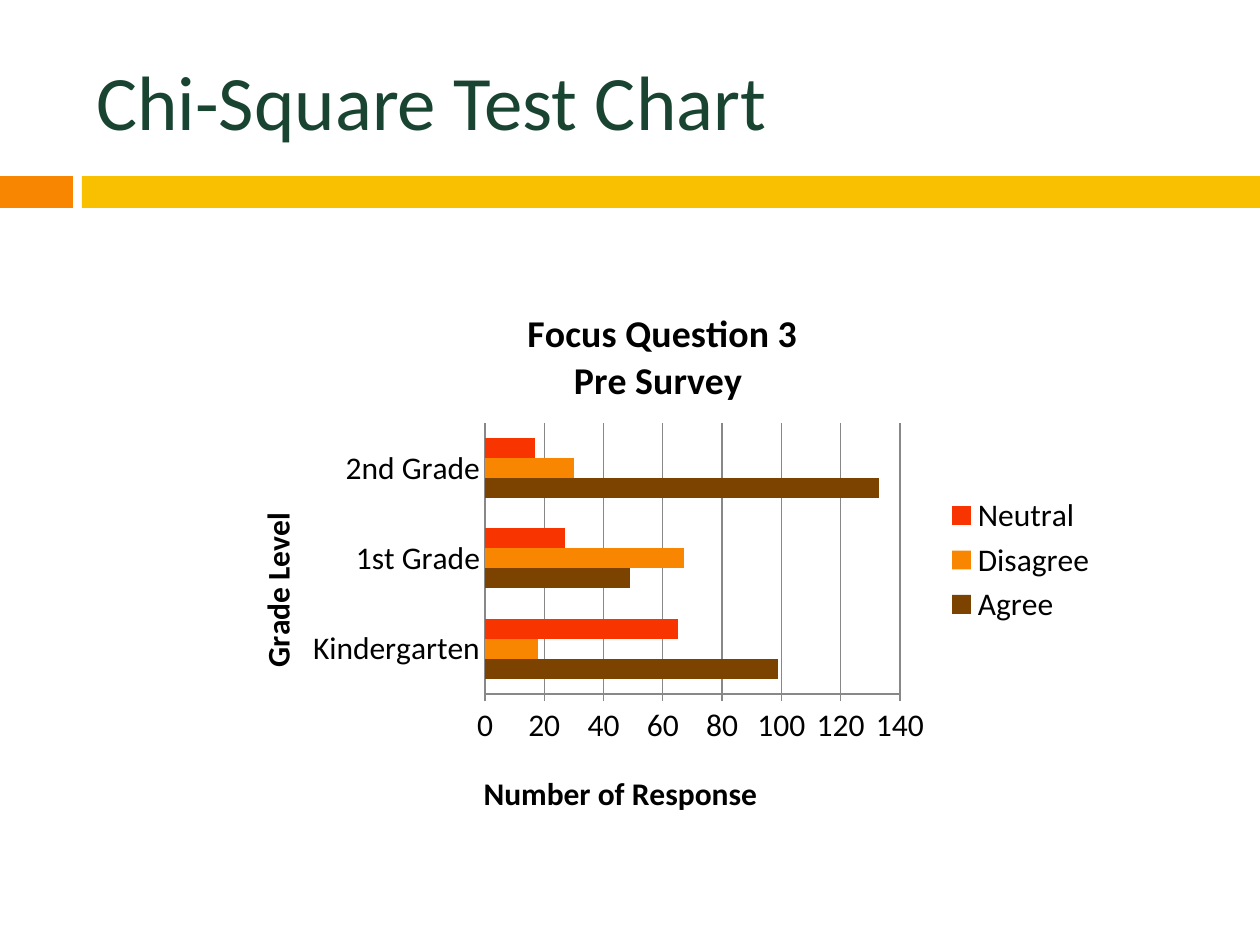
from lxml import etree
from pptx import Presentation
from pptx import util as u
from pptx.chart.data import CategoryChartData
from pptx.dml.color import RGBColor
from pptx.enum import chart as kinds, shapes, text
from pptx.oxml.ns import qn

FONT = "Calibri"
GREEN = RGBColor(0x19, 0x44, 0x31)
ORANGE = RGBColor(0xF8, 0x86, 0x00)
YELLOW = RGBColor(0xF8, 0xC0, 0x00)
BROWN = RGBColor(0x7C, 0x43, 0x00)
RED = RGBColor(0xF8, 0x35, 0x00)
GREY = RGBColor(0x88, 0x88, 0x88)
BLACK = RGBColor(0, 0, 0)

HEADING = "Chi-Square Test Chart"
BANDS = [(0, 73, ORANGE), (82, 1178, YELLOW)]
CHART_TITLE = "Focus Question 3\nPre Survey "
GRADES = ["Kindergarten", "1st Grade", "2nd Grade"]
ANSWERS = [
    ("Agree", (99, 49, 133), BROWN),
    ("Disagree", (18, 67, 30), ORANGE),
    ("Neutral", (65, 27, 17), RED),
]
CHART_AREA = (215, 287, 895, 546)
PLOT_AREA = (485, 423, 415, 271)
GRADE_TITLE_AT = (250, 507)
RESPONSE_TITLE_AT = (478, 766)


def px(length):
    """Turn px at 126 to the inch into EMU."""
    return u.Emu(round(length * 914400 / 126))


def style(font, size, bold=False, color=BLACK):
    """Set the face, size, weight and colour of a font."""
    font.name, font.size, font.bold = FONT, u.Pt(size), bold
    font.color.rgb = color


def set_layout(parent, index, area):
    """Fix a chart part at a px position, with a size if one is given."""
    for old in parent.findall(qn("c:layout")):
        parent.remove(old)
    layout = etree.Element(qn("c:layout"))
    manual = etree.SubElement(layout, qn("c:manualLayout"))
    left, top, width, height = CHART_AREA
    values = [("xMode", "edge"), ("yMode", "edge"),
              ("x", (area[0] - left) / width), ("y", (area[1] - top) / height)]
    if len(area) == 4:
        values.insert(0, ("layoutTarget", "inner"))
        values += [("w", area[2] / width), ("h", area[3] / height)]
    for tag, value in values:
        etree.SubElement(manual, qn("c:" + tag)).set("val", str(value))
    parent.insert(index, layout)


def set_title(title, wording, size):
    """Write a bold chart or axis title."""
    title.text_frame.text = wording
    for para in title.text_frame.paragraphs:
        for span in para.runs:
            style(span.font, size, True)


def add_bands(page):
    """Draw the two bars under the heading."""
    for left, width, color in BANDS:
        band = page.shapes.add_shape(
            shapes.MSO_SHAPE.RECTANGLE, px(left), px(176), px(width), px(32))
        band.shadow.inherit = False
        band.fill.solid()
        band.fill.fore_color.rgb = color
        band.line.fill.background()


def add_heading(page):
    """Write the slide heading."""
    box = page.shapes.add_textbox(px(84), px(32), px(1124), px(136))
    frame = box.text_frame
    frame.word_wrap = True
    frame.vertical_anchor = text.MSO_ANCHOR.MIDDLE
    frame.text = HEADING
    style(frame.paragraphs[0].runs[0].font, 44, color=GREEN)


def add_survey_chart(page):
    """Add the bar chart of answers by grade."""
    data = CategoryChartData()
    data.categories = GRADES
    for name, counts, _ in ANSWERS:
        data.add_series(name, counts)
    chart = page.shapes.add_chart(
        kinds.XL_CHART_TYPE.BAR_CLUSTERED, *map(px, CHART_AREA), data).chart
    style(chart.font, 18)
    set_title(chart.chart_title, CHART_TITLE, 21.6)
    chart.has_legend = True
    chart.legend.position = kinds.XL_LEGEND_POSITION.RIGHT
    chart.legend.include_in_layout = False

    plot = chart.plots[0]
    plot.gap_width, plot.overlap, plot.vary_by_categories = 150, 0, False
    for series, (_, _, color) in zip(plot.series, ANSWERS):
        series.format.fill.solid()
        series.format.fill.fore_color.rgb = color

    grades, responses = chart.category_axis, chart.value_axis
    grades.major_tick_mark = kinds.XL_TICK_MARK.NONE
    responses.major_tick_mark = kinds.XL_TICK_MARK.OUTSIDE
    responses.minimum_scale, responses.maximum_scale = 0, 140
    responses.major_unit = 20
    responses.has_major_gridlines = True
    for line in (grades.format.line, responses.format.line,
                 responses.major_gridlines.format.line):
        line.color.rgb = GREY
        line.width = u.Pt(0.75)
    for axis, wording, place in (
            (grades, "Grade Level", GRADE_TITLE_AT),
            (responses, "Number of Response ", RESPONSE_TITLE_AT)):
        set_title(axis.axis_title, wording, 18)
        set_layout(axis.axis_title.element, 1, place)
    body = next(grades.axis_title.element.iter(qn("a:bodyPr")))
    body.set("rot", "-5400000")
    body.set("vert", "horz")
    set_layout(next(chart.element.iter(qn("c:plotArea"))), 0, PLOT_AREA)


def main():
    """Build and save the slide."""
    deck = Presentation()
    deck.slide_width, deck.slide_height = px(1260), px(945)
    page = deck.slides.add_slide(deck.slide_layouts[6])
    add_bands(page)
    add_heading(page)
    add_survey_chart(page)
    deck.save("out.pptx")


if __name__ == "__main__":
    main()
